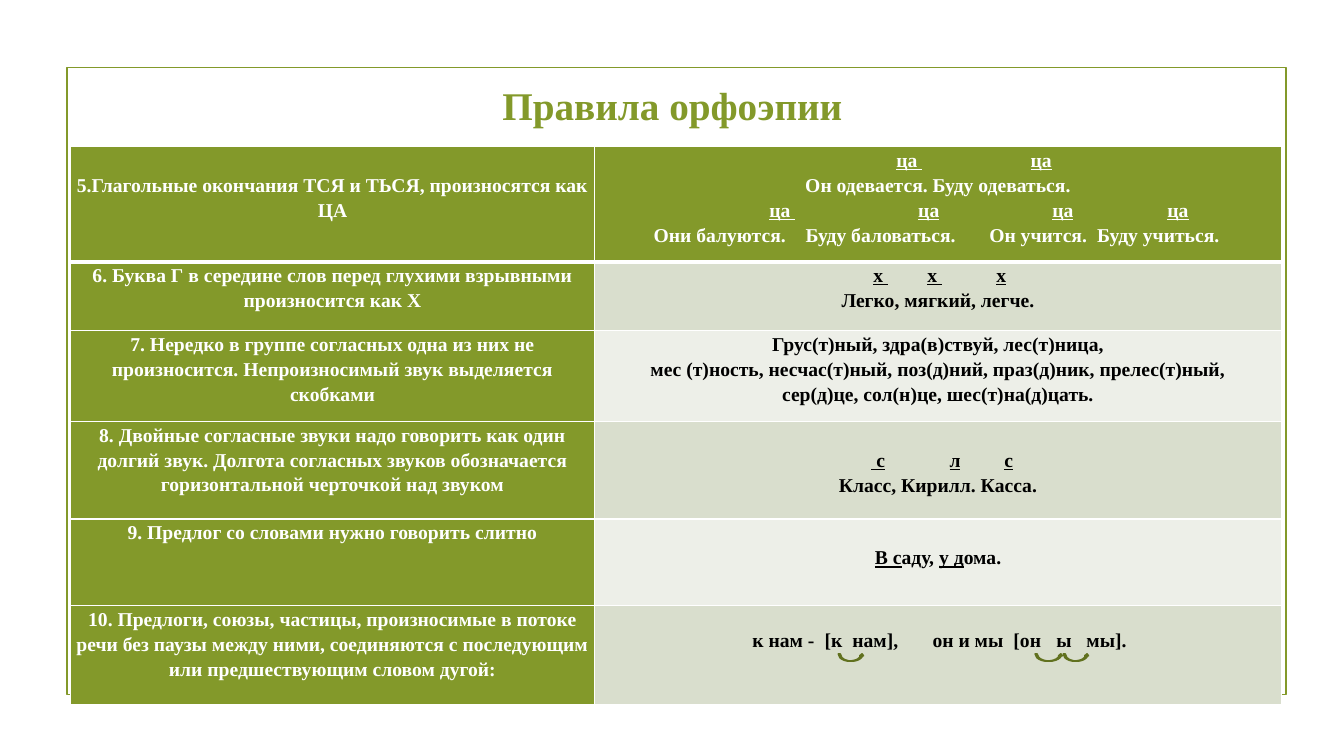
import pptx
import pptx.util
import pptx.dml.color
import pptx.enum.shapes
import pptx.enum.text
import pptx.oxml
import pptx.oxml.ns
from lxml import etree

Cm = pptx.util.Cm
Pt = pptx.util.Pt
RGBColor = pptx.dml.color.RGBColor
ALIGN = pptx.enum.text.PP_ALIGN
SHAPES = pptx.enum.shapes.MSO_SHAPE
qn = pptx.oxml.ns.qn

OLIVE = RGBColor(0x83, 0x99, 0x2A)
DARK_OLIVE = RGBColor(0x61, 0x71, 0x1F)
SAGE = RGBColor(0xD9, 0xDE, 0xCD)
PALE_SAGE = RGBColor(0xED, 0xEF, 0xE8)
WHITE = RGBColor(0xFF, 0xFF, 0xFF)
BLACK = RGBColor(0, 0, 0)

COLUMN_WIDTHS = (13.2, 17.32)
ROW_HEIGHTS = (2.9, 1.73, 2.29, 2.46, 2.18, 2.5)
LINE_GAP = 0.63

RULES = (
    "5.Глагольные окончания ТСЯ и ТЬСЯ, произносятся как ЦА",
    "6. Буква Г в середине слов перед глухими взрывными произносится как Х",
    "7. Нередко в группе согласных одна из них не произносится. "
    "Непроизносимый звук выделяется скобками",
    "8. Двойные согласные звуки надо говорить как один долгий звук. "
    "Долгота согласных звуков обозначается горизонтальной черточкой над звуком",
    "9. Предлог со словами нужно говорить слитно",
    "10. Предлоги, союзы, частицы, произносимые в потоке речи без паузы между ними, "
    "соединяются с последующим или предшествующим словом дугой:",
)
RULE_TOPS = (LINE_GAP, 0, 0, 0, 0, 0)

EXAMPLES = (
    (
        [(7.51, "_ца _"), (10.89, "_ца_")],
        "Он одевается. Буду одеваться.",
        [(4.31, "_ца _"), (8.06, "_ца_"), (11.44, "_ца_"), (14.34, "_ца_")],
        [(1.39, "Они балуются."), (5.22, "Буду баловаться."),
         (9.85, "Он учится."), (12.57, "Буду учиться.")],
    ),
    (
        [(6.93, "_х _"), (8.29, "_х _"), (10.03, "_х_")],
        "Легко, мягкий, легче.",
    ),
    (
        "Грус(т)ный, здра(в)ствуй, лес(т)ница,",
        "мес (т)ность, несчас(т)ный, поз(д)ний, праз(д)ник, прелес(т)ный,",
        "сер(д)це, сол(н)це, шес(т)на(д)цать.",
    ),
    (
        [(6.88, "_ с_"), (8.85, "_л_"), (10.23, "_с_")],
        "Класс, Кирилл. Касса.",
    ),
    ("_В с_аду, _у д_ома.",),
    (
        [(3.88, "к нам -"), (5.7, "[к"), (6.4, "нам],"), (8.42, "он и мы"),
         (10.46, "[он"), (11.54, "ы"), (12.3, "мы].")],
    ),
)
EXAMPLE_TOPS = (0, 0, 0, LINE_GAP, LINE_GAP, 0.53)
EXAMPLE_FILLS = (OLIVE, SAGE, PALE_SAGE, SAGE, PALE_SAGE, SAGE)
LIAISON_ARCS = ((21.13, 0.64), (26.09, 0.69), (26.8, 0.64))


class RuleSlide:
    font_name = "Times New Roman"
    body_size = 14
    title_size = 28
    line_width = 1.25

    def __init__(self, slide):
        self.slide = slide

    def run(self, paragraph, text, size, color, underline=False):
        run = paragraph.add_run()
        run.text = text
        run.font.name = self.font_name
        run.font.size = Pt(size)
        run.font.bold = True
        run.font.underline = underline
        run.font.color.rgb = color

    def marked_text(self, paragraph, text, color):
        for index, part in enumerate(text.split("_")):
            if part:
                self.run(paragraph, part, self.body_size, color, index % 2 == 1)

    def tabbed_text(self, paragraph, words, color):
        paragraph.alignment = ALIGN.LEFT
        stops = etree.SubElement(paragraph._p.get_or_add_pPr(), qn("a:tabLst"))
        for position, word in words:
            etree.SubElement(stops, qn("a:tab"), pos=str(int(Cm(position))), algn="l")
            self.run(paragraph, "\t", self.body_size, color)
            self.marked_text(paragraph, word, color)

    def shape(self, kind, left, top, width, height, line, fill=None):
        shape = self.slide.shapes.add_shape(kind, Cm(left), Cm(top), Cm(width), Cm(height))
        shape.shadow.inherit = False
        shape.line.color.rgb = line
        shape.line.width = Pt(self.line_width)
        if fill is None:
            shape.fill.background()
        else:
            shape.fill.solid()
            shape.fill.fore_color.rgb = fill

    def title(self, text, left, top, width, height):
        box = self.slide.shapes.add_textbox(Cm(left), Cm(top), Cm(width), Cm(height))
        frame = box.text_frame
        frame.word_wrap = True
        frame.margin_top = frame.margin_bottom = 0
        paragraph = frame.paragraphs[0]
        paragraph.alignment = ALIGN.CENTER
        self.run(paragraph, text, self.title_size, OLIVE)

    def borders(self, cell, top, bottom):
        properties = cell._tc.get_or_add_tcPr()
        for side, width in (("L", 1), ("R", 1), ("T", top), ("B", bottom)):
            line = etree.SubElement(properties, qn("a:ln" + side), w=str(int(Pt(width))))
            fill = etree.SubElement(line, qn("a:solidFill"))
            etree.SubElement(fill, qn("a:srgbClr"), val=str(WHITE))

    def cell(self, cell, lines, top, fill, color):
        cell.margin_left = cell.margin_right = Cm(0.1)
        cell.margin_top = Cm(top)
        cell.margin_bottom = 0
        cell.fill.solid()
        cell.fill.fore_color.rgb = fill
        frame = cell.text_frame
        for index, line in enumerate(lines):
            paragraph = frame.add_paragraph() if index else frame.paragraphs[0]
            paragraph.line_spacing = 1.15
            if isinstance(line, str):
                paragraph.alignment = ALIGN.CENTER
                self.marked_text(paragraph, line, color)
            else:
                self.tabbed_text(paragraph, line, color)

    def rule_table(self, left, top):
        table = self.slide.shapes.add_table(
            len(RULES), len(COLUMN_WIDTHS), Cm(left), Cm(top),
            Cm(sum(COLUMN_WIDTHS)), Cm(sum(ROW_HEIGHTS))).table
        table.first_row = table.horz_banding = False
        for column, width in zip(table.columns, COLUMN_WIDTHS):
            column.width = Cm(width)
        for index, height in enumerate(ROW_HEIGHTS):
            table.rows[index].height = Cm(height)
            rule, example = table.cell(index, 0), table.cell(index, 1)
            for cell in (rule, example):
                self.borders(cell, 3 if index == 1 else 1, 3 if index == 0 else 1)
            self.cell(rule, [RULES[index]], RULE_TOPS[index], OLIVE, WHITE)
            self.cell(example, EXAMPLES[index], EXAMPLE_TOPS[index],
                      EXAMPLE_FILLS[index], BLACK if index else WHITE)


def main():
    deck = pptx.Presentation()
    deck.slide_width = Cm(33.87)
    deck.slide_height = Cm(19.05)
    page = RuleSlide(deck.slides.add_slide(deck.slide_layouts[6]))
    page.shape(SHAPES.RECTANGLE, 1.69, 1.7, 30.72, 15.8, OLIVE)
    page.title("Правила орфоэпии", 3.61, 2.06, 26.67, 1.88)
    page.rule_table(1.78, 3.7)
    for left, width in LIAISON_ARCS:
        page.shape(SHAPES.CURVED_UP_ARROW, left, 16.48, width, 0.18, DARK_OLIVE, OLIVE)
    deck.save("out.pptx")


if __name__ == "__main__":
    main()
